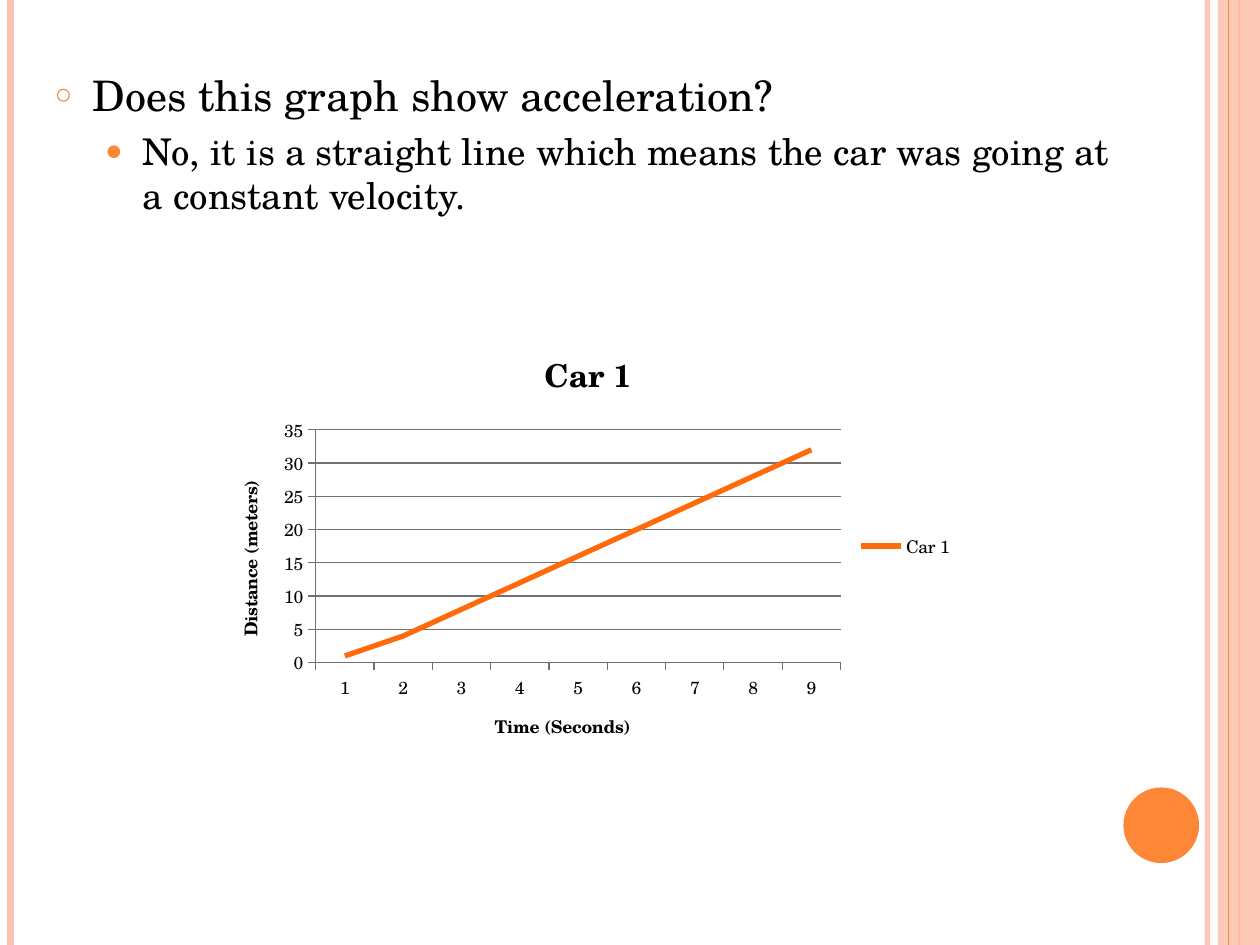
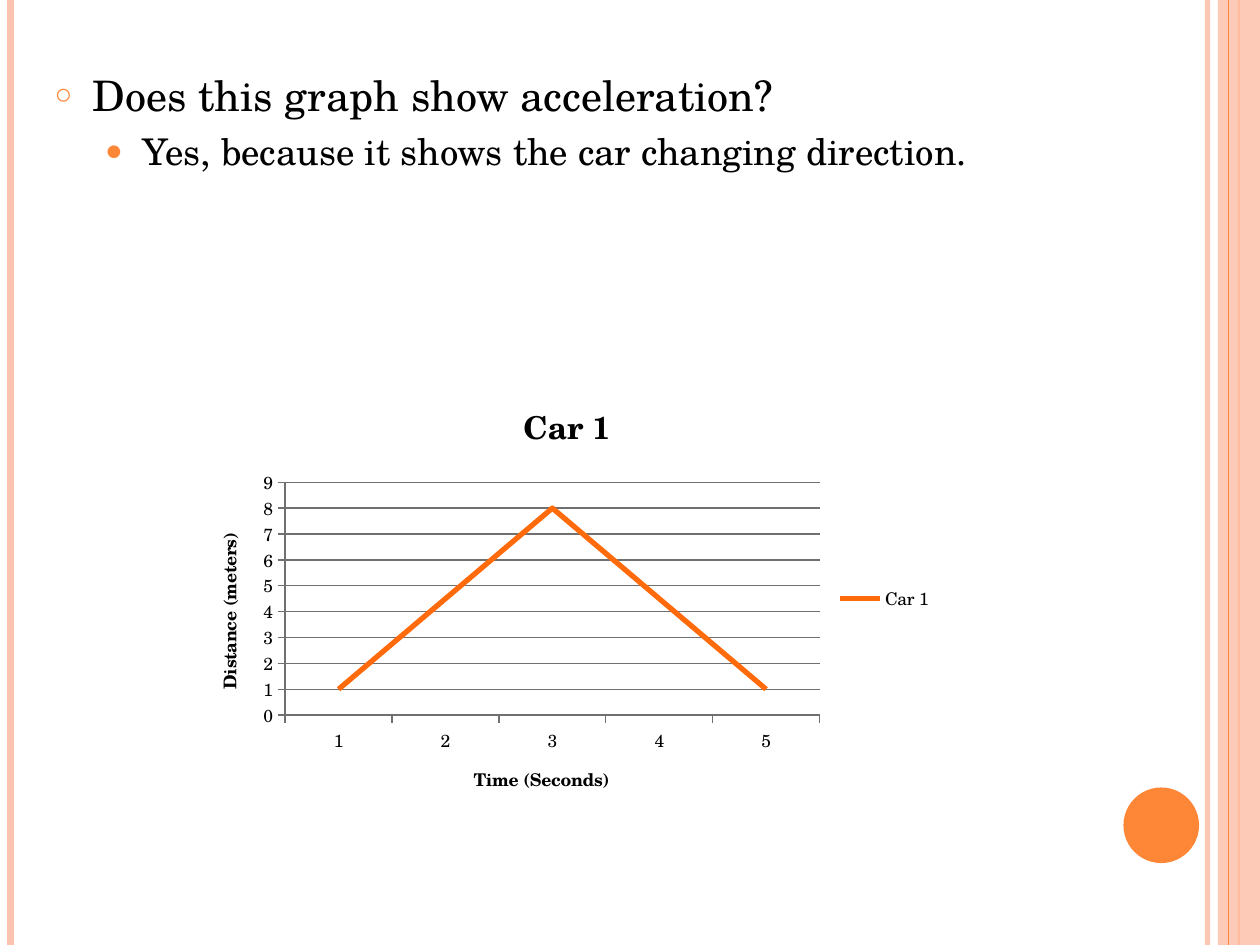
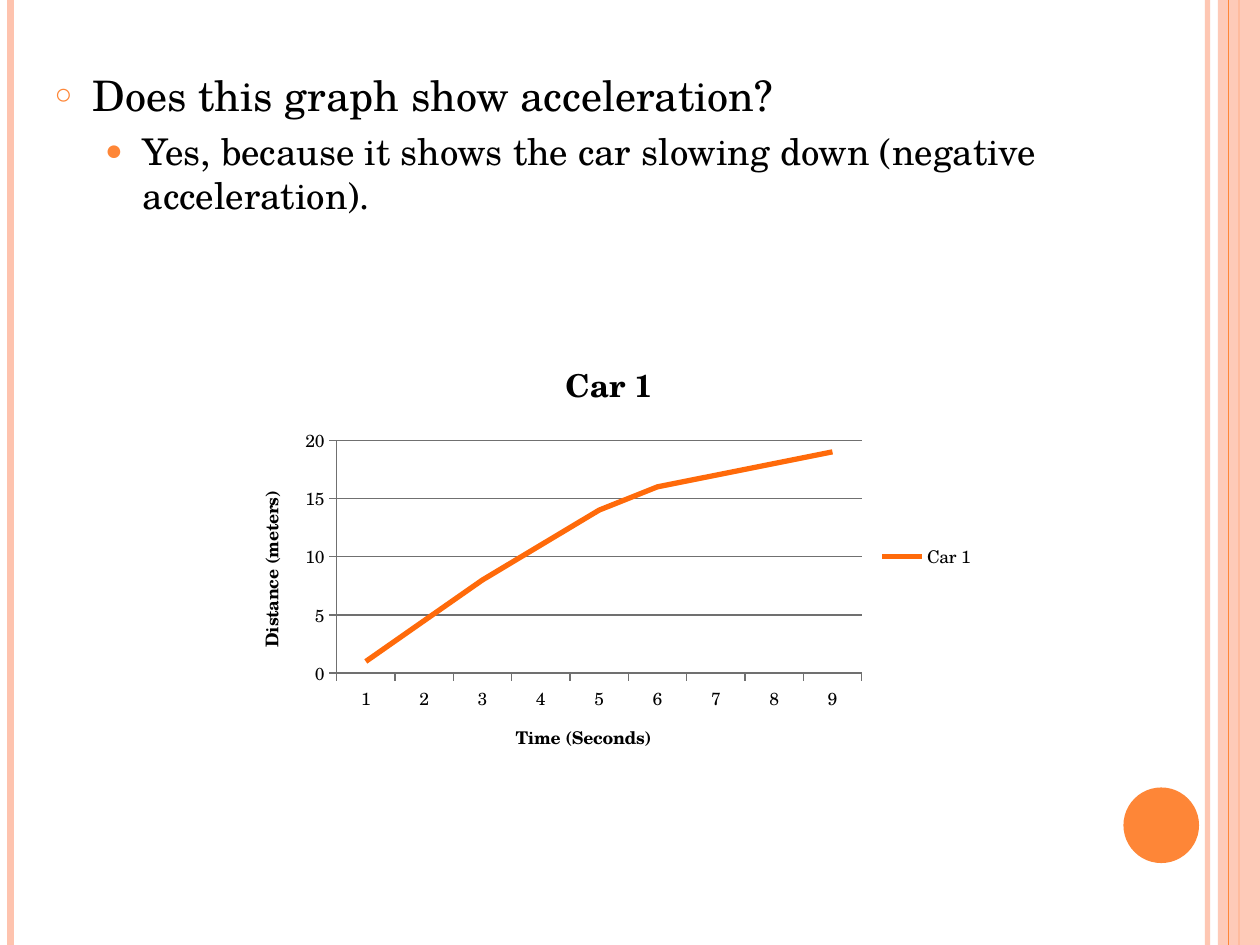
"""Three slides asking whether a distance-time graph shows acceleration."""
from lxml.etree import SubElement
from pptx import Presentation
from pptx.chart.data import CategoryChartData
from pptx.dml.color import RGBColor
from pptx.enum.chart import XL_CHART_TYPE, XL_LEGEND_POSITION, XL_TICK_MARK
from pptx.enum.shapes import MSO_CONNECTOR, MSO_SHAPE
from pptx.enum.text import MSO_ANCHOR, MSO_AUTO_SIZE
from pptx.oxml.ns import qn
from pptx.util import Inches, Pt

COLORS = {"peach": "FEC3AE", "orange": "FE8637", "curve": "FF6A0A",
          "grid": "707070", "text": "000000"}
FONT = "TeX Gyre Schola"
COLUMNS, ROWS = 120, 90
QUESTION = "Does this graph show acceleration?"
LEVELS = [
    {"size": 24, "before": 6, "indent": 0.3, "bullet": "○", "bullet_size": 70},
    {"size": 21, "before": 5, "indent": 0.7, "bullet": "●", "bullet_size": 80},
]
CARS = [
    {"answer": "No, it is a straight line which means the car was going at a constant velocity.",
     "corner": (20, 31), "distances": [1, 4, 8, 12, 16, 20, 24, 28, 32]},
    {"answer": "Yes, because it shows the car changing direction.",
     "corner": (18, 36), "distances": [1, 4.5, 8, 4.5, 1]},
    {"answer": "Yes, because it shows the car slowing down (negative acceleration).",
     "corner": (22, 32), "distances": [1, 4.5, 8, 11, 14, 16, 17, 18, 19]},
]
STRIPES = [(115, "peach", 3, 93), (1, "peach", 4.5, 100),
           (118, "orange", 1.5, 100), (117, "orange", 0.75, 100)]

prs = Presentation()
prs.slide_width, prs.slide_height = Inches(10), Inches(7.5)
column, row = prs.slide_width // COLUMNS, prs.slide_height // ROWS


def paint(fill, color, opacity=100):
    fill.solid()
    fill.fore_color.rgb = RGBColor.from_string(COLORS[color])
    if opacity < 100:
        tint = next(fill._xPr.iter(qn("a:srgbClr")))
        SubElement(tint, qn("a:alpha"), val=str(opacity * 1000))


def style(font, size, bold=False):
    for attribute, value in {"name": FONT, "size": Pt(size), "bold": bold}.items():
        setattr(font, attribute, value)
    font.color.rgb = RGBColor.from_string(COLORS["text"])


for car in CARS:
    slide = prs.slides.add_slide(prs.slide_layouts[1])
    heading = slide.shapes.title.element
    heading.getparent().remove(heading)

    discussion = slide.placeholders[1]
    place = {"left": 4 * column, "top": 6 * row, "width": 104 * column, "height": 20 * row}
    for attribute, value in place.items():
        setattr(discussion, attribute, value)
    frame = discussion.text_frame
    frame.text = "\n".join([QUESTION, car["answer"]])
    frame.auto_size = MSO_AUTO_SIZE.NONE
    frame.vertical_anchor = MSO_ANCHOR.TOP
    for depth, (paragraph, level) in enumerate(zip(frame.paragraphs, LEVELS)):
        paragraph.level = depth
        paragraph.space_before = Pt(level["before"])
        style(paragraph.runs[0].font, level["size"])
        properties = paragraph._p.get_or_add_pPr()
        properties.set("marL", str(Inches(level["indent"])))
        properties.set("indent", str(Inches(-0.3)))
        bullet_color = SubElement(properties, qn("a:buClr"))
        SubElement(bullet_color, qn("a:srgbClr"), val=COLORS["orange"])
        SubElement(properties, qn("a:buSzPct"), val=str(level["bullet_size"] * 1000))
        SubElement(properties, qn("a:buChar"), char=level["bullet"])

    distances = CategoryChartData()
    distances.categories = [str(second + 1) for second in range(len(car["distances"]))]
    distances.add_series("Car 1", car["distances"])
    left, top = car["corner"]
    graph = slide.shapes.add_chart(XL_CHART_TYPE.LINE, left * column, top * row,
                                   72 * column, 42 * row, distances).chart
    style(graph.font, 10)
    graph.has_title = True
    graph.chart_title.text_frame.text = "Car 1"
    graph.chart_title.include_in_layout = False
    style(graph.chart_title.text_frame.paragraphs[0].runs[0].font, 18, True)
    graph.has_legend = True
    graph.legend.position = XL_LEGEND_POSITION.RIGHT
    graph.legend.include_in_layout = False
    graph.value_axis.has_major_gridlines = True
    for axis, caption in ((graph.category_axis, "Time (Seconds)"),
                          (graph.value_axis, "Distance (meters)")):
        axis.axis_title.text_frame.text = caption
        style(axis.axis_title.text_frame.paragraphs[0].runs[0].font, 10, True)
        axis.major_tick_mark = XL_TICK_MARK.OUTSIDE
    for rule in (graph.category_axis.format.line, graph.value_axis.format.line,
                 graph.value_axis.major_gridlines.format.line):
        paint(rule.fill, "grid")
        rule.width = Pt(0.75)
    graph.plots[0].vary_by_categories = False
    curve = graph.plots[0].series[0]
    curve.smooth = False
    paint(curve.format.line.fill, "curve")
    curve.format.line.width = Pt(3)

shapes = prs.slides[0].shapes
stripes = []
for position, color, weight, opacity in STRIPES:
    stripe = shapes.add_connector(MSO_CONNECTOR.STRAIGHT, position * column, 0,
                                  position * column, prs.slide_height)
    stripe.line.width = Pt(weight)
    paint(stripe.line.fill, color, opacity)
    SubElement(stripe.element.spPr, qn("a:effectLst"))
    stripes.append(stripe)

band = shapes.add_shape(MSO_SHAPE.RECTANGLE, 116 * column, 0, 4 * column, prs.slide_height)
disc = shapes.add_shape(MSO_SHAPE.OVAL, 107 * column, 75 * row, Inches(0.6), Inches(0.6))
for ornament, color, opacity in ((band, "peach", 87), (disc, "orange", 100)):
    paint(ornament.fill, color, opacity)
    ornament.line.fill.background()
    ornament.shadow.inherit = False

for ornament in (*stripes[:3], band, stripes[3], disc):
    prs.slide_master.shapes.element.append(ornament.element)

prs.save("out.pptx")
